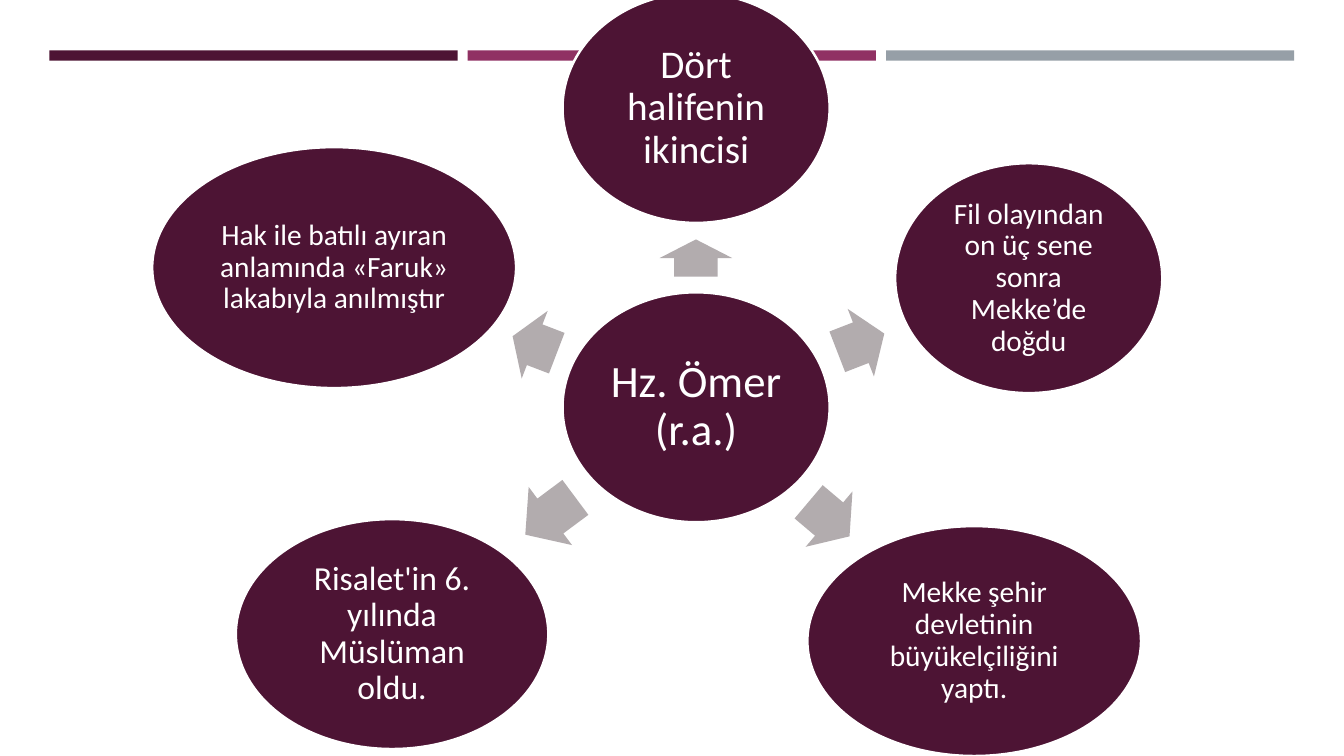
from pptx import Presentation
from pptx.dml.color import RGBColor
from pptx.enum.shapes import MSO_SHAPE
from pptx.enum.text import MSO_ANCHOR, PP_ALIGN
from pptx.util import Pt

RECT, OVAL, ARROW = MSO_SHAPE.RECTANGLE, MSO_SHAPE.OVAL, MSO_SHAPE.RIGHT_ARROW
MIDDLE, CENTER = MSO_ANCHOR.MIDDLE, PP_ALIGN.CENTER

PLUM = RGBColor(0x4D, 0x14, 0x34)
BERRY = RGBColor(0x90, 0x31, 0x63)
SLATE = RGBColor(0x96, 0x9F, 0xA7)
GREY = RGBColor(0xB2, 0xAC, 0xAE)
WHITE = RGBColor(0xFF, 0xFF, 0xFF)

# Top bars
BARS = [PLUM, BERRY, SLATE]
BAR_LEFT, BAR_TOP, BAR_WIDTH, BAR_HEIGHT, BAR_STEP = 35.3, 36, 291.6, 7.4, 298.8

# Text, text size, box of the oval (left, top, width, height)
HUB = ("Hz. Ömer (r.a.)", 32, (401.8, 208.8, 190.8, 164.2))

# Arrow (left, top, width, turn), then the oval it points to
ARROW_HEIGHT = 51.8
SPOKES = [
    ((483.8, 158.4, 26.6, 270),
     ("Dört halifenin ikincisi", 28, (401.8, -5, 190.8, 164.2))),
    ((596.9, 218.9, 36, 338.8),
     ("Fil olayından on üç sene sonra Mekke’de doğdu", 21,
      (639.4, 116.6, 190.8, 164.2))),
    ((573.1, 344.9, 38.2, 40.2),
     ("Mekke şehir devletinin büyükelçiliğini yaptı.", 21,
      (576.7, 375.8, 238.3, 164.2))),
    ((370.8, 342.7, 44.6, 143.3),
     ("Risalet'in 6. yılında Müslüman oldu.", 24,
      (168.5, 370.8, 223.2, 164.2))),
    ((365, 220.3, 33.8, 201),
     ("Hak ile batılı ayıran anlamında «Faruk» lakabıyla anılmıştır", 21,
      (108.7, 105.1, 259.9, 172.1))),
]


def add_solid(slide, kind, box, color):
    shape = slide.shapes.add_shape(kind, *[Pt(n) for n in box])
    shape.shadow.inherit = False
    shape.fill.solid()
    shape.fill.fore_color.rgb = color
    shape.line.fill.background()
    return shape


def add_oval(slide, text, size, box):
    oval = add_solid(slide, OVAL, box, PLUM)
    oval.line.color.rgb = WHITE
    oval.line.width = Pt(1.75)
    frame = oval.text_frame
    frame.word_wrap = True
    frame.vertical_anchor = MIDDLE
    inset = Pt(size / 10)
    frame.margin_left = frame.margin_right = inset
    frame.margin_top = frame.margin_bottom = inset
    para = frame.paragraphs[0]
    para.text = text
    para.alignment = CENTER
    para.line_spacing = 0.9
    para.font.name = "Calibri"
    para.font.size = Pt(size)
    para.font.color.rgb = WHITE


def add_arrow(slide, left, top, width, turn):
    arrow = add_solid(slide, ARROW, (left, top, width, ARROW_HEIGHT), GREY)
    arrow.adjustments[0] = 0.6
    arrow.adjustments[1] = 0.5
    arrow.rotation = turn


def main():
    deck = Presentation()
    deck.slide_width, deck.slide_height = Pt(960), Pt(540)
    slide = deck.slides.add_slide(deck.slide_layouts[6])

    # Bars along the top
    for i, color in enumerate(BARS):
        left = BAR_LEFT + i * BAR_STEP
        add_solid(slide, RECT, (left, BAR_TOP, BAR_WIDTH, BAR_HEIGHT), color)

    # Hub, then each arrow with its oval
    add_oval(slide, *HUB)
    for arrow, oval in SPOKES:
        add_arrow(slide, *arrow)
        add_oval(slide, *oval)

    deck.save("out.pptx")


if __name__ == "__main__":
    main()
